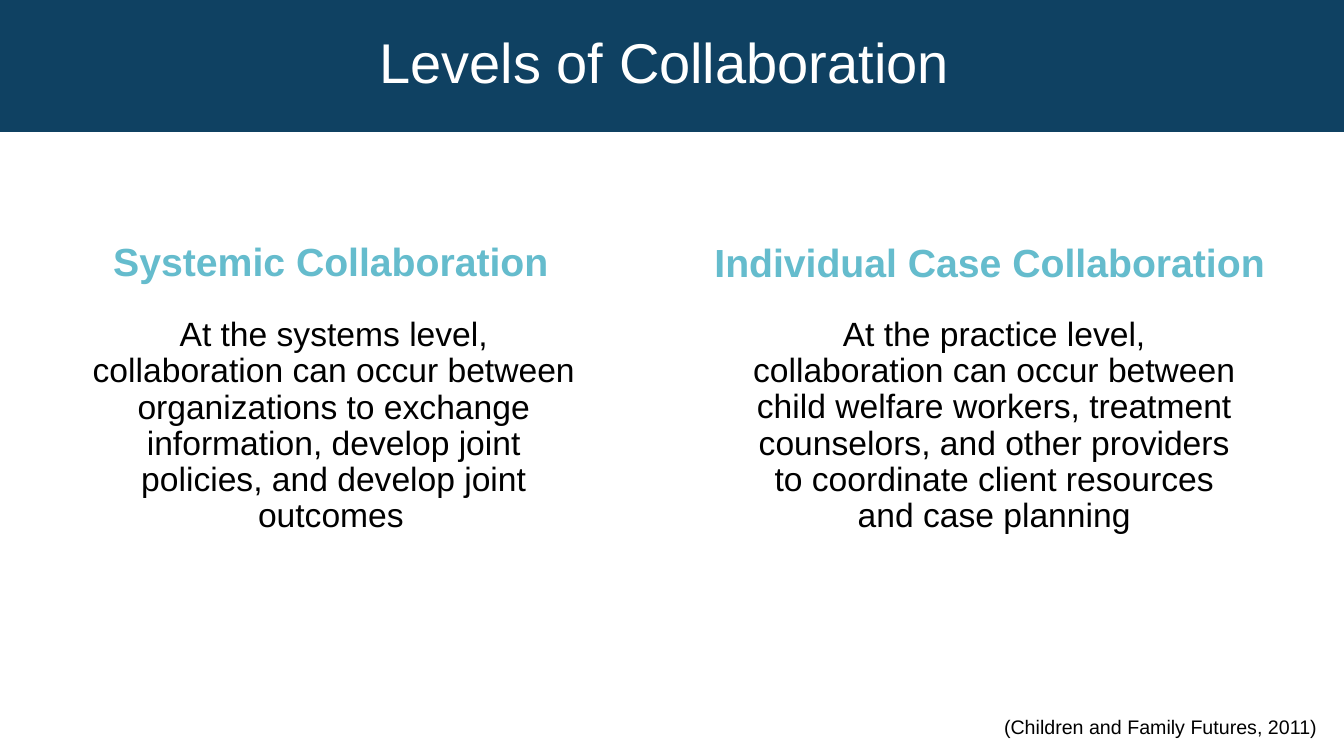
import pptx
import pptx.dml.color
import pptx.enum.shapes
import pptx.enum.text
import pptx.oxml.ns
import pptx.util
from lxml import etree

Inches = pptx.util.Inches
RGBColor = pptx.dml.color.RGBColor
PP_ALIGN = pptx.enum.text.PP_ALIGN
MSO_ANCHOR = pptx.enum.text.MSO_ANCHOR

NAVY = RGBColor(0x0F, 0x41, 0x62)
TEAL = RGBColor(0x65, 0xBC, 0xCD)
WHITE = RGBColor(0xFF, 0xFF, 0xFF)
BLACK = RGBColor(0x00, 0x00, 0x00)

# Content: boxes are left, top, width, height in inches
TITLE = "Levels of Collaboration "
CITATION = "(Children and Family Futures, 2011)"
LEVELS = [
    {
        "heading": "Systemic Collaboration",
        "heading_box": (0.77, 2.31, 5.02, 0.57),
        "body": "At the systems level, collaboration can occur between "
                "organizations to exchange information, develop joint "
                "policies, and develop joint outcomes\t",
        "body_box": (0.81, 3.1, 5, 2.75),
    },
    {
        "heading": "Individual Case Collaboration",
        "heading_box": (6.76, 2.32, 6.11, 0.57),
        "body": "At the practice level, collaboration can occur between "
                "child welfare workers, treatment counselors, and other "
                "providers to coordinate client resources and case planning",
        "body_box": (7.36, 3.1, 5, 2.33),
    },
]


def write(shape, text, size, color, align=PP_ALIGN.CENTER, bold=False,
          spacing=1.0, anchor=MSO_ANCHOR.TOP):
    frame = shape.text_frame
    frame.word_wrap = True
    frame.vertical_anchor = anchor
    paragraph = frame.paragraphs[0]
    paragraph.text = text
    paragraph.alignment = align
    paragraph.line_spacing = spacing
    paragraph.font.name = "Arial"
    paragraph.font.size = pptx.util.Pt(size)
    paragraph.font.bold = bold
    paragraph.font.color.rgb = color


def add_panel(slide, box, fill, opacity=100):
    shape = slide.shapes.add_shape(
        pptx.enum.shapes.MSO_SHAPE.RECTANGLE, *map(Inches, box))
    shape.shadow.inherit = False
    shape.fill.solid()
    shape.fill.fore_color.rgb = fill
    shape.line.fill.background()
    if opacity < 100:
        qn = pptx.oxml.ns.qn
        color = shape.fill._xPr.find(qn("a:solidFill")).find(qn("a:srgbClr"))
        etree.SubElement(color, qn("a:alpha")).set("val", str(opacity * 1000))
    return shape


def main():
    presentation = pptx.Presentation()
    presentation.slide_width = Inches(13.33)
    presentation.slide_height = Inches(7.5)
    slide = presentation.slides.add_slide(presentation.slide_layouts[6])

    # Title band
    band = add_panel(slide, (0, 0, 13.33, 1.3), NAVY)
    band.line.color.rgb = NAVY
    band.line.width = pptx.util.Pt(1)
    write(band, TITLE, 40, WHITE, spacing=0.9, anchor=MSO_ANCHOR.MIDDLE)

    # One column per level
    for level in LEVELS:
        body = add_panel(slide, level["body_box"], WHITE, opacity=75)
        write(body, level["body"], 24, BLACK, spacing=0.9)
        heading = add_panel(slide, level["heading_box"], WHITE, opacity=75)
        write(heading, level["heading"], 28, TEAL, bold=True)

    # Citation
    citation = slide.shapes.add_textbox(*map(Inches, (9.86, 7.04, 3.7, 0.34)))
    write(citation, CITATION, 14, BLACK, align=PP_ALIGN.LEFT)

    presentation.save("out.pptx")


if __name__ == "__main__":
    main()
